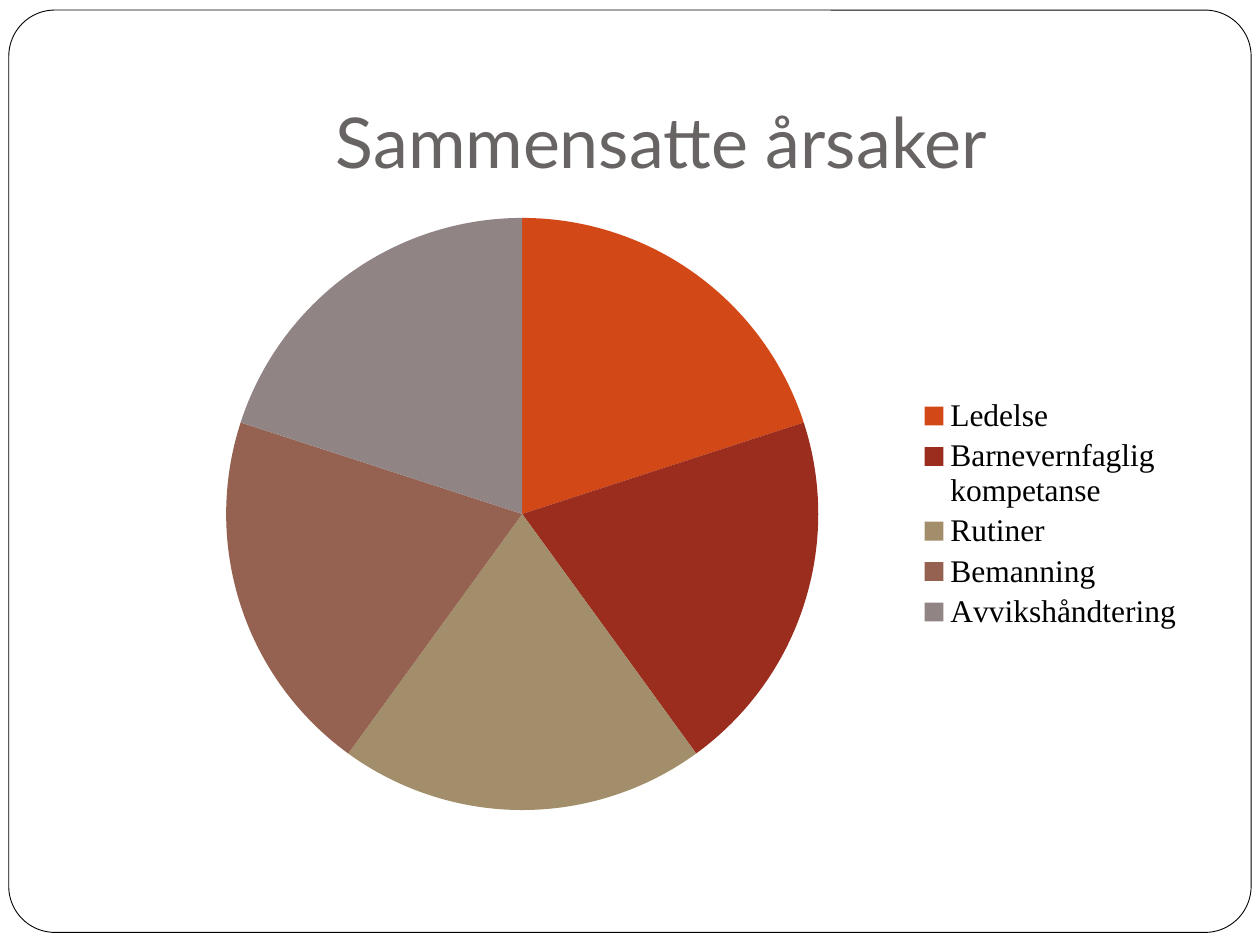
import pptx
import pptx.chart.data
import pptx.dml.color
import pptx.enum.chart
import pptx.enum.shapes
import pptx.enum.text
import pptx.oxml
import pptx.util
from pptx.util import Inches

COLORS = {
    "white": "FFFFFF",
    "black": "000000",
    "title": "696464",
}
CAUSES = {
    "Ledelse": "D34817",
    "Barnevernfaglig kompetanse": "9B2D1F",
    "Rutiner": "A28E6A",
    "Bemanning": "956251",
    "Avvikshåndtering": "918485",
}
PLOT_LAYOUT = {"x": 0.09, "y": 0.03, "w": 0.56, "h": 0.94}


def rgb(value):
    return pptx.dml.color.RGBColor.from_string(value)


class SlideBuilder:
    title_font = "Lato"
    chart_font = "Times New Roman"

    def __init__(self, slide):
        self.slide = slide

    def frame(self, left, top, width, height):
        shape = self.slide.shapes.add_shape(
            pptx.enum.shapes.MSO_SHAPE.ROUNDED_RECTANGLE,
            Inches(left), Inches(top), Inches(width), Inches(height),
        )
        shape.adjustments[0] = 0.05
        shape.shadow.inherit = False
        shape.fill.solid()
        shape.fill.fore_color.rgb = rgb(COLORS["white"])
        shape.line.color.rgb = rgb(COLORS["black"])
        shape.line.width = pptx.util.Pt(0.5)

    def title(self, text, left, top, width, height):
        shape = self.slide.shapes.add_textbox(
            Inches(left), Inches(top), Inches(width), Inches(height)
        )
        text_frame = shape.text_frame
        text_frame.word_wrap = True
        text_frame.vertical_anchor = pptx.enum.text.MSO_ANCHOR.BOTTOM
        text_frame.margin_bottom = Inches(0.1)
        paragraph = text_frame.paragraphs[0]
        paragraph.alignment = pptx.enum.text.PP_ALIGN.CENTER
        run = paragraph.add_run()
        run.text = text
        run.font.name = self.title_font
        run.font.size = pptx.util.Pt(40)
        run.font.color.rgb = rgb(COLORS["title"])

    def pie(self, causes, left, top, width, height):
        chart_data = pptx.chart.data.CategoryChartData()
        chart_data.categories = list(causes)
        chart_data.add_series("Series 1", [100 / len(causes)] * len(causes))
        chart = self.slide.shapes.add_chart(
            pptx.enum.chart.XL_CHART_TYPE.PIE,
            Inches(left), Inches(top), Inches(width), Inches(height), chart_data,
        ).chart
        chart.has_title = False
        chart.font.name = self.chart_font
        chart.font.size = pptx.util.Pt(18)
        chart.font.color.rgb = rgb(COLORS["black"])
        chart.has_legend = True
        chart.legend.position = pptx.enum.chart.XL_LEGEND_POSITION.RIGHT
        chart.legend.include_in_layout = False
        plot = chart.plots[0]
        plot.vary_by_categories = True
        for index, color in enumerate(causes.values()):
            point_format = plot.series[0].points[index].format
            point_format.fill.solid()
            point_format.fill.fore_color.rgb = rgb(color)
            point_format.line.fill.background()
        self.place_plot(chart)

    def place_plot(self, chart):
        namespace = "http://schemas.openxmlformats.org/drawingml/2006/chart"
        modes = '<c:xMode val="edge"/><c:yMode val="edge"/>'
        sizes = "".join(f'<c:{key} val="{value}"/>' for key, value in PLOT_LAYOUT.items())
        layout = pptx.oxml.parse_xml(
            f'<c:layout xmlns:c="{namespace}"><c:manualLayout>'
            f'<c:layoutTarget val="inner"/>{modes}{sizes}</c:manualLayout></c:layout>'
        )
        plot_area = chart.element.find(f".//{{{namespace}}}plotArea")
        for existing in plot_area.findall(f"{{{namespace}}}layout"):
            plot_area.remove(existing)
        plot_area.insert(0, layout)


def main():
    presentation = pptx.Presentation()
    presentation.slide_width = Inches(10)
    presentation.slide_height = Inches(7.5)
    slide = presentation.slides.add_slide(presentation.slide_layouts[6])
    builder = SlideBuilder(slide)
    builder.frame(0.07, 0.08, 9.86, 7.32)
    builder.title("Sammensatte årsaker", 1, 0.3, 8.5, 1.25)
    builder.pie(CAUSES, 1, 1.58, 8.5, 5)
    presentation.save("out.pptx")


if __name__ == "__main__":
    main()
